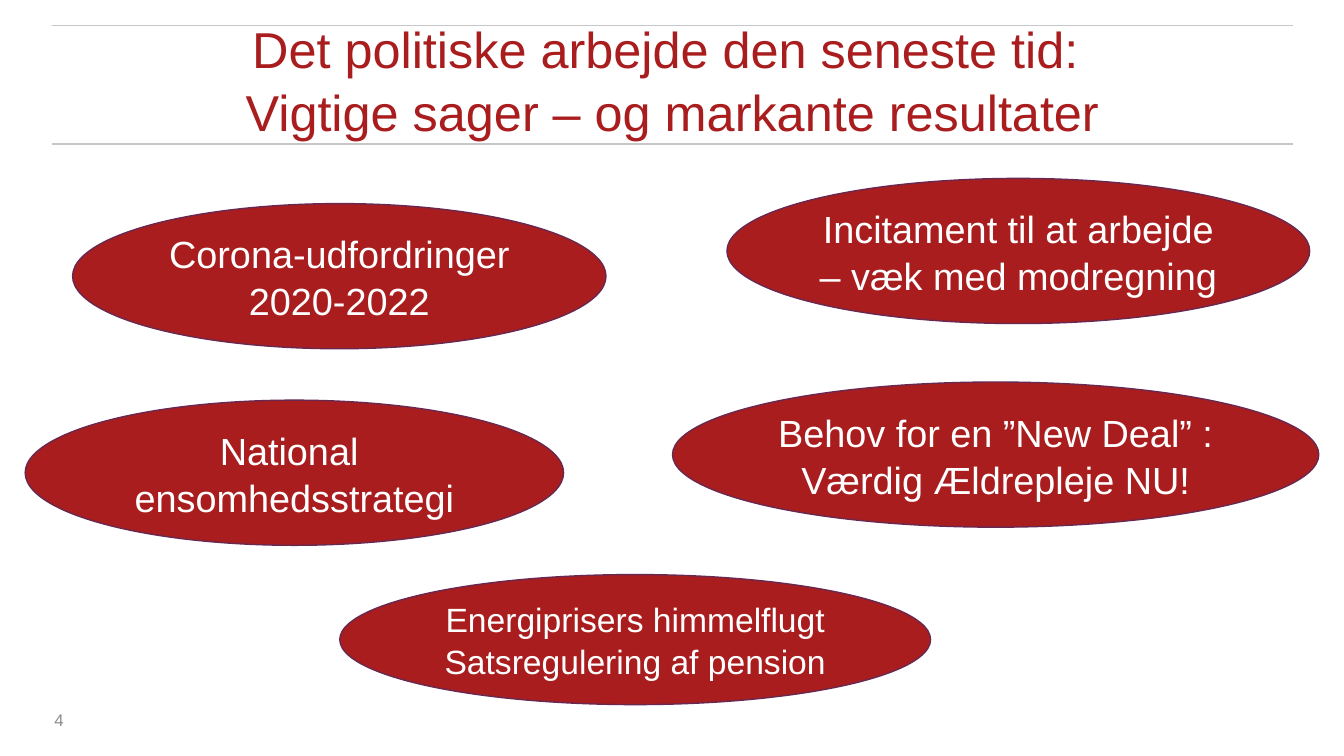
from pptx import Presentation
from pptx.dml.color import RGBColor
from pptx.enum.shapes import MSO_CONNECTOR, MSO_SHAPE
from pptx.enum.text import MSO_ANCHOR, PP_ALIGN
from pptx.oxml import parse_xml
from pptx.oxml.ns import nsdecls
from pptx.util import Pt

PX = 9144  # 100 px to the inch
OVAL = MSO_SHAPE.OVAL
STRAIGHT = MSO_CONNECTOR.STRAIGHT
MIDDLE = MSO_ANCHOR.MIDDLE
CENTER, LEFT = PP_ALIGN.CENTER, PP_ALIGN.LEFT
COLORS = {"red": "A91D1E", "outline": "682850", "rule": "C7C7C7",
          "white": "FFFFFF", "number": "8C8C8C"}


def color(name):
    return RGBColor.from_string(COLORS[name])


def write(shape, paragraphs, size, color_name, inset=0, align=CENTER):
    frame = shape.text_frame
    frame.word_wrap = True
    frame.vertical_anchor = MIDDLE
    frame.margin_left = frame.margin_right = inset * PX
    frame.margin_top = frame.margin_bottom = inset * PX
    for index, text in enumerate(paragraphs):
        paragraph = frame.add_paragraph() if index else frame.paragraphs[0]
        paragraph.alignment = align
        paragraph.line_spacing = 1.04
        for number, line in enumerate(text.split("\n")):
            if number:
                paragraph.add_line_break()
            run = paragraph.add_run()
            run.text = line
            run.font.name = "Arial"
            run.font.size = Pt(size)
            run.font.color.rgb = color(color_name)


presentation = Presentation()
presentation.slide_width = 1333 * PX
presentation.slide_height = 750 * PX
slide = presentation.slides.add_slide(presentation.slide_layouts[5])

# Rules above and below the title
for y in (143, 25):
    rule = slide.shapes.add_connector(STRAIGHT, 52 * PX, y * PX, 1282 * PX, y * PX)
    rule.line.color.rgb = color("rule")
    rule.line.width = Pt(1)
    rule._element.spPr.append(parse_xml(f"<a:effectLst {nsdecls('a')}/>"))

# Title
title = slide.shapes.title
title.left, title.top, title.width, title.height = (v * PX for v in (53, 25, 1228, 106))
write(title, ["Det politiske arbejde den seneste tid: \n"
              "Vigtige sager – og markante resultater"], 36, "red")

# Topic ellipses: left, top, width, height, text size, paragraphs
topics = [
    (72, 202, 529, 144, 27, ["Corona-udfordringer 2020-2022"]),
    (667, 379, 641, 144, 27, ["Behov for en ”New Deal” : ", "Værdig Ældrepleje NU!"]),
    (25, 397, 534, 144, 27, ["National ", "ensomhedsstrategi"]),
    (721, 177, 578, 144, 27, ["Incitament til at arbejde – væk med modregning"]),
    (337, 570, 586, 129, 24, ["Energiprisers himmelflugt", "Satsregulering af pension"]),
]
for left, top, width, height, size, paragraphs in topics:
    ellipse = slide.shapes.add_shape(OVAL, left * PX, top * PX, width * PX, height * PX)
    ellipse.shadow.inherit = False
    ellipse.fill.solid()
    ellipse.fill.fore_color.rgb = color("red")
    ellipse.line.color.rgb = color("outline")
    ellipse.line.width = Pt(1)
    write(ellipse, paragraphs, size, "white", inset=6)

# Slide number
page_number = slide.shapes.add_textbox(44 * PX, 694 * PX, 311 * PX, 40 * PX)
write(page_number, ["4"], 12, "number", inset=10, align=LEFT)

presentation.save("out.pptx")
